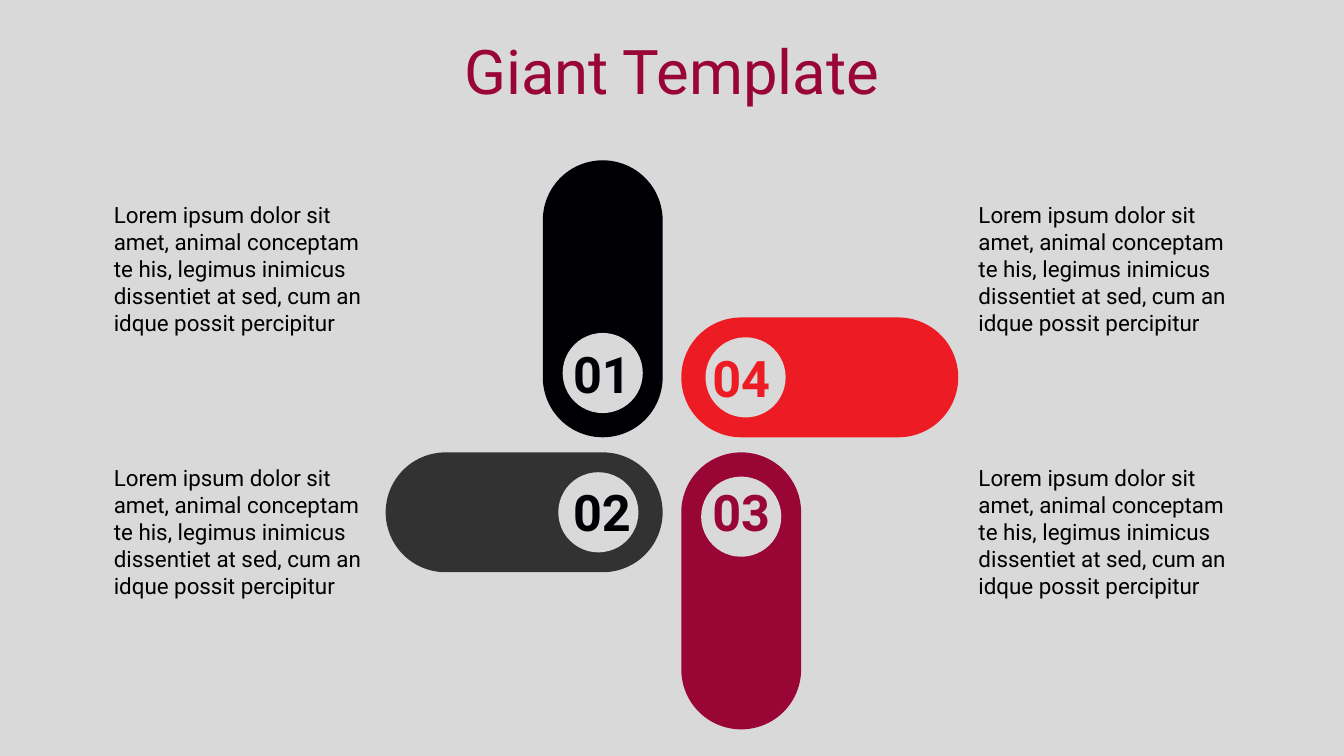
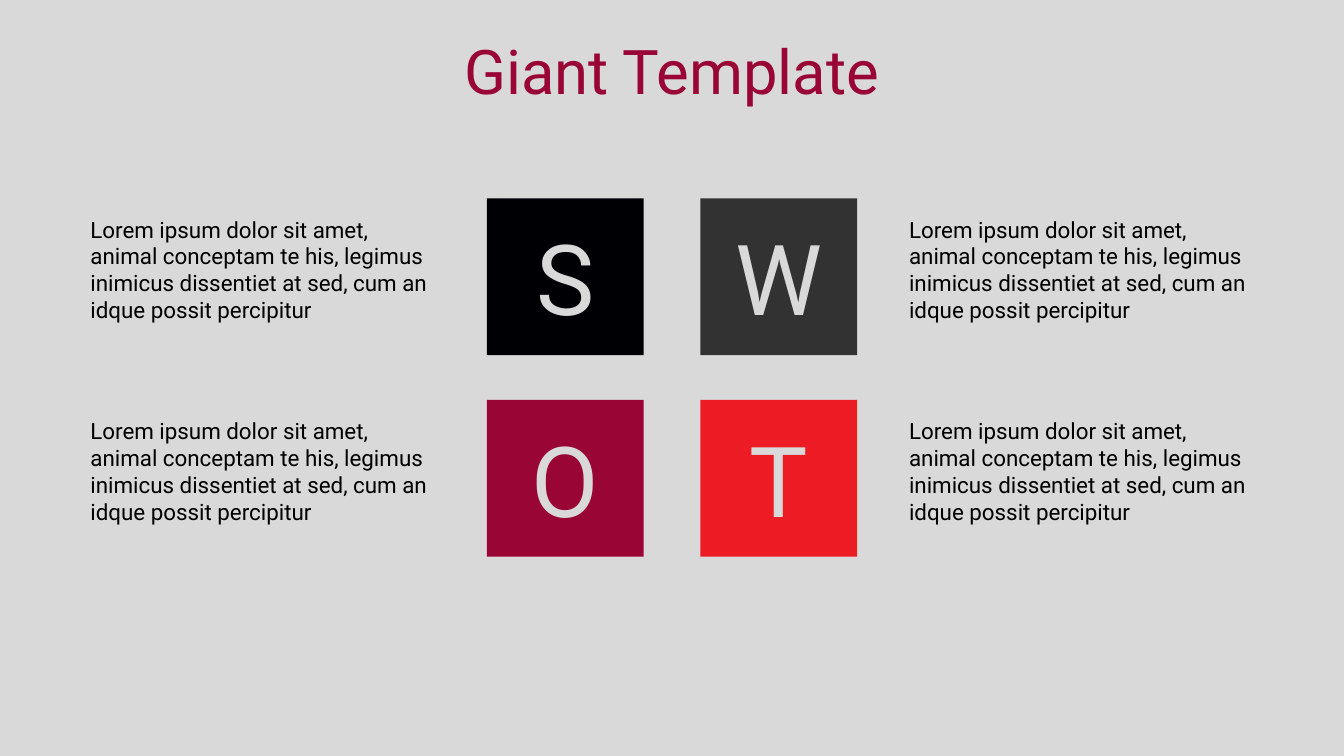
from itertools import product

from pptx import Presentation
from pptx.dml.color import RGBColor
from pptx.enum.shapes import MSO_SHAPE
from pptx.enum.text import MSO_ANCHOR, PP_ALIGN
from pptx.util import Cm, Pt

PILL = MSO_SHAPE.ROUNDED_RECTANGLE
OVAL = MSO_SHAPE.OVAL
SQUARE = MSO_SHAPE.RECTANGLE
LEFT, CENTER = PP_ALIGN.LEFT, PP_ALIGN.CENTER
TOP, MIDDLE = MSO_ANCHOR.TOP, MSO_ANCHOR.MIDDLE

GREY = RGBColor(0xD9, 0xD9, 0xD9)
BLACK = RGBColor(0x00, 0x00, 0x00)
INK = RGBColor(0x00, 0x00, 0x04)
CHARCOAL = RGBColor(0x32, 0x32, 0x32)
CRIMSON = RGBColor(0x99, 0x05, 0x35)
RED = RGBColor(0xED, 0x1C, 0x24)
FONT = "Roboto"

# Content
TITLE = "Giant Template"
BODY = ("Lorem ipsum dolor sit amet, animal conceptam te his, legimus inimicus "
        "dissentiet at sed, cum an idque possit percipitur")
# number, fill, number colour, column, row, upright, top of number
PILLS = [
    ("01", INK, INK, 0, 0, True, 8.53),
    ("02", CHARCOAL, INK, 0, 1, False, 12.01),
    ("03", CRIMSON, CRIMSON, 1, 1, True, 12.01),
    ("04", RED, RED, 1, 0, False, 8.61),
]
SWOT = [("S", INK), ("W", CHARCOAL), ("O", CRIMSON), ("T", RED)]

# Layout, in centimetres
SLIDE_WIDTH, SLIDE_HEIGHT = 33.87, 19.05
TITLE_WIDTH = 17.04
PILL_LENGTH, PILL_BREADTH = 6.98, 3.02
HUB_X = (16.7, 17.17)      # inner ends of the left and right pills
HUB_Y = (11.02, 11.4)      # inner ends of the upper and lower pills
HOLE_SIZE = 2.02
HOLE_INSET = 1.62          # from the inner end to the centre of the hole
NUMBER_X = (13.94, 17.45)
SQUARE_SIZE = 3.95
SQUARE_X = (12.27, 17.65)
SQUARE_Y = (5.0, 10.08)


def write(shape, text, size, color, align=LEFT, anchor=TOP, bold=False):
    """Put one styled paragraph in the shape and return it."""
    frame = shape.text_frame
    frame.text = text
    frame.word_wrap = True
    frame.vertical_anchor = anchor
    para = frame.paragraphs[0]
    para.alignment = align
    font = para.runs[0].font
    font.name, font.size, font.bold = FONT, Pt(size), bold
    font.color.rgb = color
    return para


def add_text(page, left, top, width, height, *args, **style):
    box = page.shapes.add_textbox(Cm(left), Cm(top), Cm(width), Cm(height))
    return write(box, *args, **style)


def add_flat_shape(page, kind, left, top, width, height, fill):
    shape = page.shapes.add_shape(kind, Cm(left), Cm(top), Cm(width), Cm(height))
    shape.shadow.inherit = False
    shape.fill.solid()
    shape.fill.fore_color.rgb = fill
    shape.line.fill.background()
    return shape


def add_page(deck):
    """Add a blank slide with the shared title."""
    page = deck.slides.add_slide(deck.slide_layouts[6])
    para = add_text(page, (SLIDE_WIDTH - TITLE_WIDTH) / 2, 0.89, TITLE_WIDTH, 1.96,
                    TITLE, 44, CRIMSON, align=CENTER, anchor=MIDDLE)
    para.line_spacing = 0.9
    return page


def add_bodies(page, lefts, tops, width, height):
    for left, top in product(lefts, tops):
        para = add_text(page, left, top, width, height, BODY, 16, BLACK)
        para.space_before = Pt(20)


def inner_span(hub, side, length):
    """Start of a span that lies before (side 0) or after (side 1) the hub."""
    return hub[side] - (length if side == 0 else 0)


def hole_start(hub, side, inset):
    center = hub[side] + (inset if side else -inset)
    return center - HOLE_SIZE / 2


def add_pill(page, number, fill, number_color, column, row, upright, number_top):
    width, height = PILL_LENGTH, PILL_BREADTH
    inset_x, inset_y = HOLE_INSET, PILL_BREADTH / 2
    if upright:
        width, height = height, width
        inset_x, inset_y = inset_y, inset_x
    pill = add_flat_shape(page, PILL, inner_span(HUB_X, column, width),
                          inner_span(HUB_Y, row, height), width, height, fill)
    pill.adjustments[0] = 0.5
    add_flat_shape(page, OVAL, hole_start(HUB_X, column, inset_x),
                   hole_start(HUB_Y, row, inset_y), HOLE_SIZE, HOLE_SIZE, GREY)
    add_text(page, NUMBER_X[column], number_top, 2.46, 1.8,
             number, 36, number_color, align=CENTER, bold=True)


def add_pinwheel_page(deck):
    page = add_page(deck)
    for pill in PILLS:
        add_pill(page, *pill)
    add_bodies(page, (2.62, 24.41), (4.95, 11.58), 6.83, 4.5)


def add_swot_page(deck):
    page = add_page(deck)
    for (letter, fill), (top, left) in zip(SWOT, product(SQUARE_Y, SQUARE_X)):
        square = add_flat_shape(page, SQUARE, left, top, SQUARE_SIZE, SQUARE_SIZE, fill)
        write(square, letter, 70, GREY, align=CENTER, anchor=MIDDLE)
    add_bodies(page, (2.03, 22.66), (5.31, 10.39), 9.17, 3.38)


def main():
    deck = Presentation()
    deck.slide_width, deck.slide_height = Cm(SLIDE_WIDTH), Cm(SLIDE_HEIGHT)
    background = deck.slide_master.background.fill
    background.solid()
    background.fore_color.rgb = GREY
    add_pinwheel_page(deck)
    add_swot_page(deck)
    deck.save("out.pptx")


if __name__ == "__main__":
    main()
